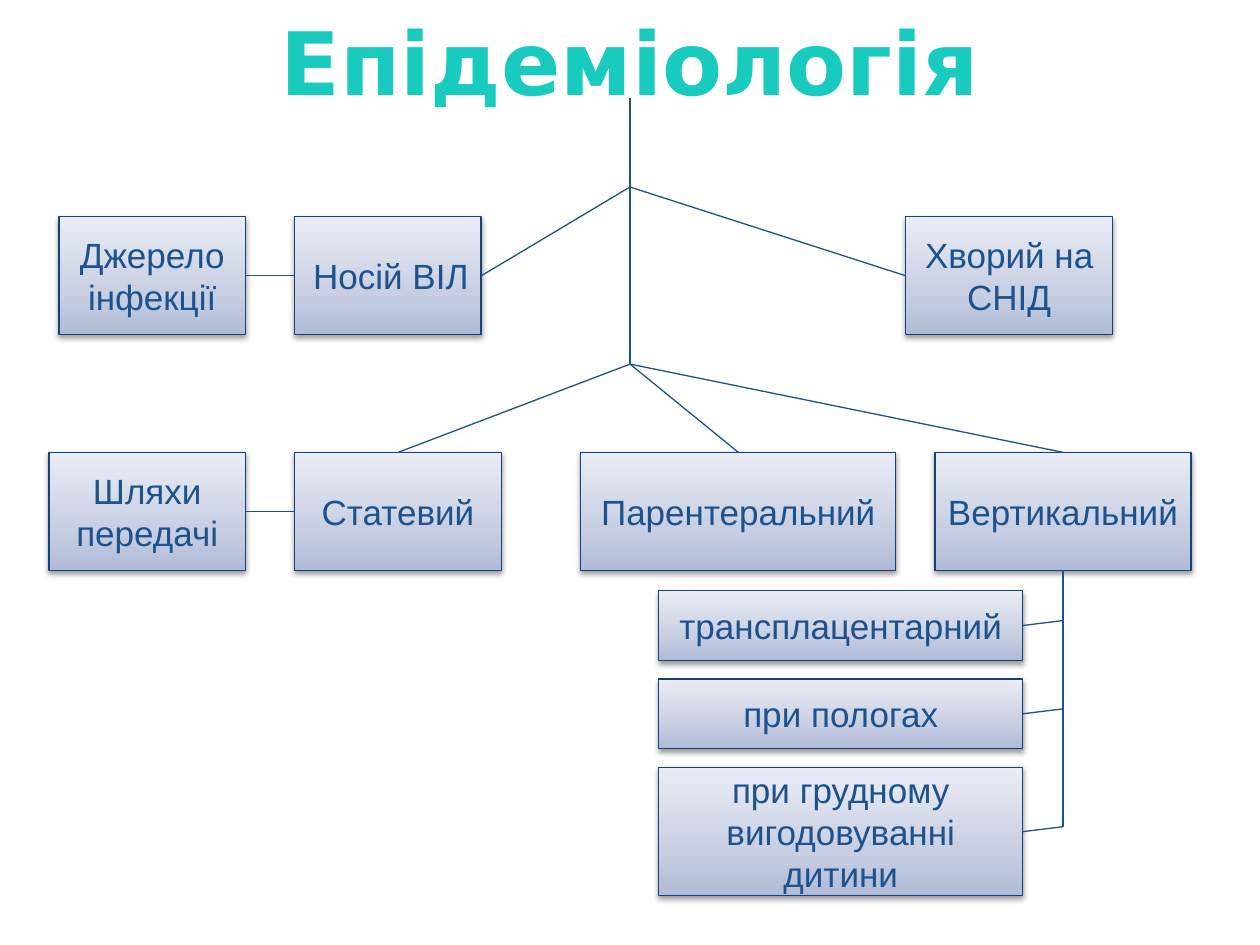
from lxml import etree
from pptx import Presentation
from pptx.dml.color import RGBColor
from pptx.enum.shapes import MSO_CONNECTOR, MSO_SHAPE
from pptx.enum.text import MSO_ANCHOR, MSO_AUTO_SIZE, PP_ALIGN
from pptx.oxml.ns import qn
from pptx.util import Cm, Pt

RECTANGLE = MSO_SHAPE.RECTANGLE
STRAIGHT = MSO_CONNECTOR.STRAIGHT
MIDDLE = MSO_ANCHOR.MIDDLE
CENTER, RIGHT_ALIGN = PP_ALIGN.CENTER, PP_ALIGN.RIGHT
TOP, LEFT, BOTTOM, RIGHT = range(4)

COLORS = {"text": "1D528D", "border": "144378", "link": "1D528D", "shadow": "000000"}
BOX_GRADIENT = [(0, "AFBBD8"), (35, "C8CFE3"), (100, "EAEDF5")]
TITLE_GRADIENT = [(0, "71F5EB"), (75, "19CBBF"), (100, "009A93")]
BOX_FONT = {"name": "Arial", "size": Pt(20)}
TITLE_FONT = {"name": "DejaVu Sans", "size": Pt(50), "bold": True}

SOURCE_TOP, ROUTE_TOP, ROW_HEIGHT = 4.37, 9.12, 2.38
TRUNK_X, TRUNK_TOP, SOURCE_FORK, ROUTE_FORK = 12.7, 1.98, 3.77, 7.34
WAY_LEFT, WAY_TOP, WAY_WIDTH, WAY_STEP = 13.28, 11.91, 7.34, 1.78
SPINE_X, BRANCH_RISE = 21.43, 0.1

ROW_BOXES = {
    "source": ("Джерело інфекції", 1.19, SOURCE_TOP, 3.76),
    "carrier": ("Носій ВІЛ", 5.94, SOURCE_TOP, 3.76),
    "patient": ("Хворий на СНІД", 18.26, SOURCE_TOP, 4.17),
    "routes": ("Шляхи передачі", 0.99, ROUTE_TOP, 3.96),
    "sexual": ("Статевий", 5.94, ROUTE_TOP, 4.17),
    "parenteral": ("Парентеральний", 11.71, ROUTE_TOP, 6.35),
    "vertical": ("Вертикальний", 18.85, ROUTE_TOP, 5.16),
}
VERTICAL_WAYS = [
    ("трансплацентарний", 1.4),
    ("при пологах", 1.4),
    ("при грудному вигодовуванні дитини", 2.59),
]


def apply_format(target, values):
    for name, value in values.items():
        setattr(target, name, value)


def add_color(parent, color):
    return etree.SubElement(parent, qn("a:srgbClr"), val=color)


def set_gradient(fill, element, stops, angle):
    """Fill with any number of stops; element is the XML that holds the fill."""
    fill.gradient()
    fill.gradient_angle = angle
    stop_list = element.find(".//" + qn("a:gsLst"))
    for stop in list(stop_list):
        stop_list.remove(stop)
    for position, color in stops:
        add_color(etree.SubElement(stop_list, qn("a:gs"), pos=str(position * 1000)), color)


def add_shadow(shape):
    shape.shadow.inherit = False
    effects = shape._element.spPr.find(qn("a:effectLst"))
    shadow = etree.SubElement(effects, qn("a:outerShdw"), blurRad="40000",
                              dist="20000", dir="5400000", rotWithShape="0")
    color = add_color(shadow, COLORS["shadow"])
    etree.SubElement(color, qn("a:alpha"), val="38000")


def write_text(frame, text, font, align=CENTER):
    apply_format(frame, {"word_wrap": True, "vertical_anchor": MIDDLE})
    para = frame.paragraphs[0]
    para.alignment = align
    span = para.add_run()
    span.text = text
    apply_format(span.font, font)
    return span


def add_title(slide, text):
    title = slide.shapes.title
    apply_format(title, {"left": Cm(1.27), "top": Cm(0.43),
                         "width": Cm(22.86), "height": Cm(1.57)})
    title.text_frame.auto_size = MSO_AUTO_SIZE.NONE
    span = write_text(title.text_frame, text, TITLE_FONT)
    set_gradient(span.font.fill, span._r, TITLE_GRADIENT, 270)


def add_box(slide, text, left, top, width, height=ROW_HEIGHT, align=CENTER):
    box = slide.shapes.add_shape(RECTANGLE, Cm(left), Cm(top), Cm(width), Cm(height))
    set_gradient(box.fill, box._element.spPr, BOX_GRADIENT, 90)
    box.line.color.rgb = RGBColor.from_string(COLORS["border"])
    box.line.width = Pt(0.75)
    add_shadow(box)
    span = write_text(box.text_frame, text, BOX_FONT, align)
    span.font.color.rgb = RGBColor.from_string(COLORS["text"])
    return box


def add_link(slide, begin, end):
    """Each end is either a (box, side) pair or an (x, y) point in centimetres."""
    link = slide.shapes.add_connector(STRAIGHT, 0, 0, 0, 0)
    ends = ((begin, "begin", link.begin_connect), (end, "end", link.end_connect))
    for (first, second), name, connect in ends:
        if isinstance(first, float):
            apply_format(link, {name + "_x": Cm(first), name + "_y": Cm(second)})
        else:
            connect(first, second)
    link.line.color.rgb = RGBColor.from_string(COLORS["link"])
    link.line.width = Pt(0.75)
    etree.SubElement(link._element.spPr, qn("a:effectLst"))


def add_trunk(slide, boxes):
    source_fork, route_fork = (TRUNK_X, SOURCE_FORK), (TRUNK_X, ROUTE_FORK)
    add_link(slide, (boxes["source"], RIGHT), (boxes["carrier"], LEFT))
    add_link(slide, (boxes["routes"], RIGHT), (boxes["sexual"], LEFT))
    add_link(slide, (TRUNK_X, TRUNK_TOP), route_fork)
    add_link(slide, (boxes["carrier"], RIGHT), source_fork)
    add_link(slide, source_fork, (boxes["patient"], LEFT))
    for name in ("sexual", "vertical", "parenteral"):
        add_link(slide, route_fork, (boxes[name], TOP))


def add_vertical_ways(slide, parent):
    for index, (text, height) in enumerate(VERTICAL_WAYS):
        top = WAY_TOP + index * WAY_STEP
        box = add_box(slide, text, WAY_LEFT, top, WAY_WIDTH, height)
        joint = (SPINE_X, top + height / 2 - BRANCH_RISE)
        add_link(slide, (box, RIGHT), joint)
    add_link(slide, (parent, BOTTOM), joint)


def main():
    deck = Presentation()
    deck.slide_width, deck.slide_height = Cm(25.4), Cm(19.05)
    slide = deck.slides.add_slide(deck.slide_layouts[5])
    add_title(slide, "Епідеміологія")
    boxes = {}
    for name, place in ROW_BOXES.items():
        align = RIGHT_ALIGN if name == "carrier" else CENTER
        boxes[name] = add_box(slide, *place, align=align)
    add_trunk(slide, boxes)
    add_vertical_ways(slide, boxes["vertical"])
    deck.save("out.pptx")


if __name__ == "__main__":
    main()
